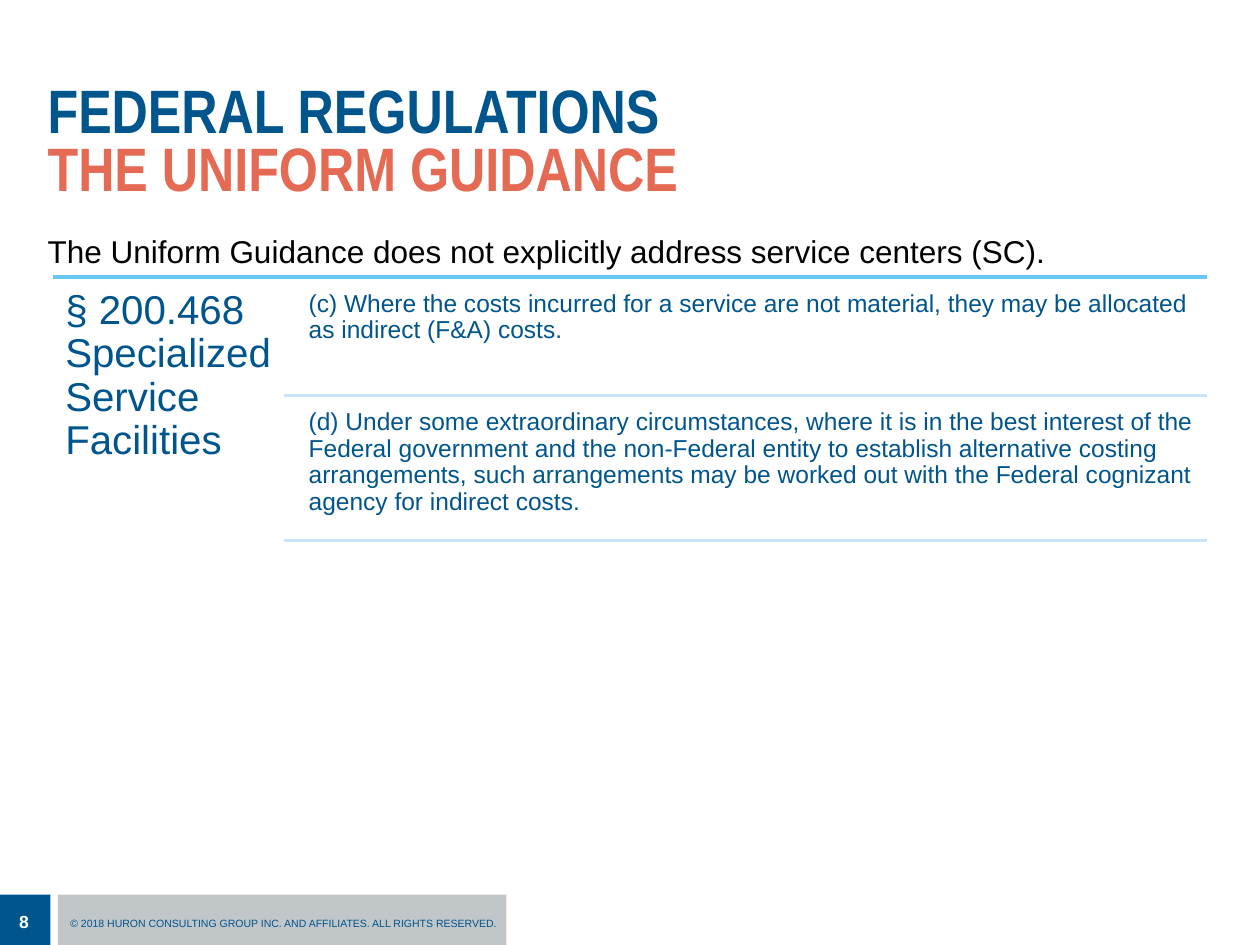
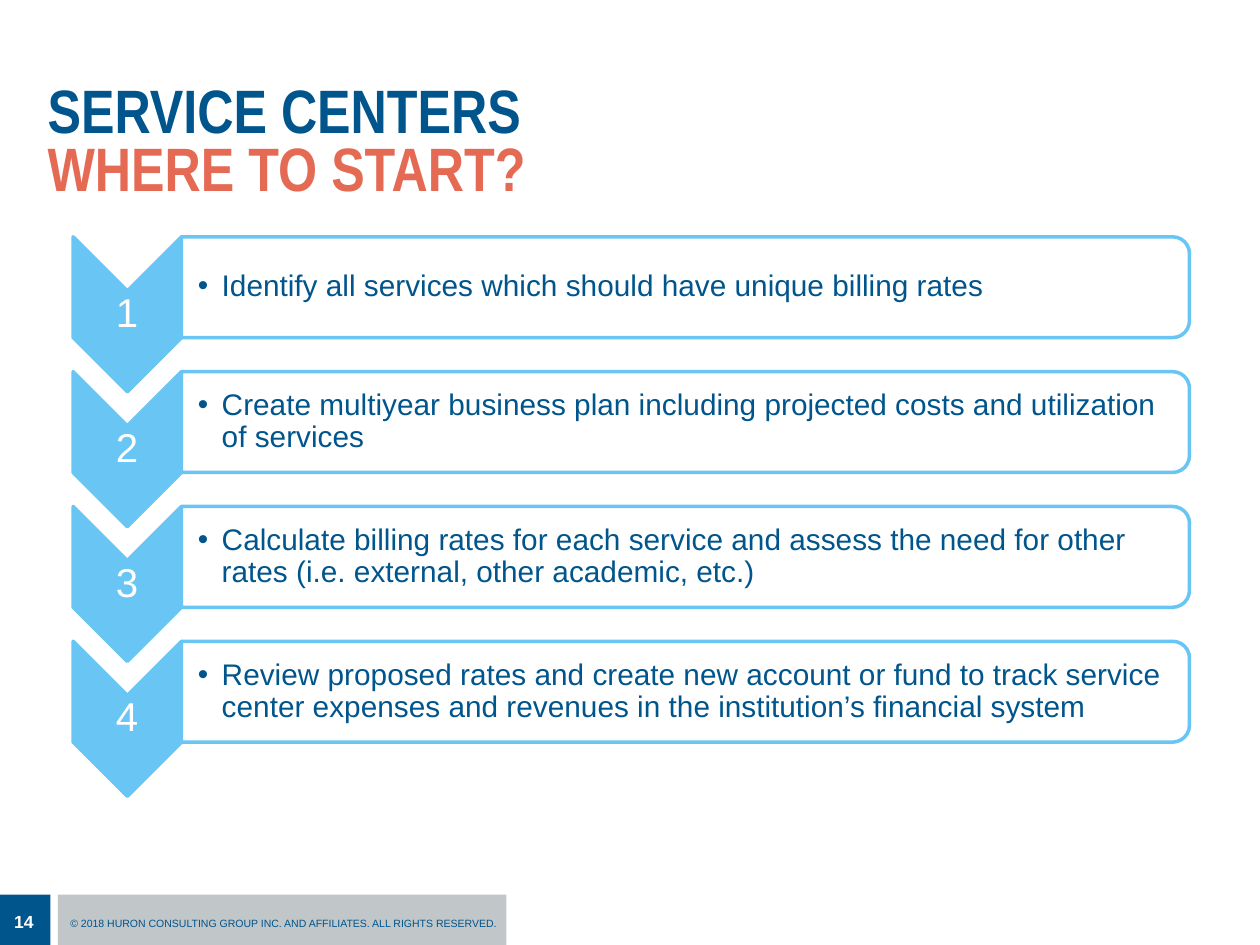
from lxml.etree import SubElement
from pptx import Presentation
from pptx.dml.color import RGBColor
from pptx.enum.shapes import MSO_CONNECTOR, MSO_SHAPE
from pptx.enum.text import MSO_ANCHOR, PP_ALIGN
from pptx.oxml.ns import qn
from pptx.util import Inches, Pt

COPYRIGHT = "© 2018 HURON CONSULTING GROUP INC. AND AFFILIATES. ALL RIGHTS RESERVED."
GUIDANCE = {
    "page": 8,
    "title": ("FEDERAL REGULATIONS", "THE UNIFORM GUIDANCE"),
    "lead": "The Uniform Guidance does not explicitly address service centers (SC).",
    "section": "§ 200.468 Specialized Service Facilities",
    "clauses": [
        ("(c) Where the costs incurred for a service are not material, they may be "
         "allocated as indirect (F&A) costs.", 0.89),
        ("(d) Under some extraordinary circumstances, where it is in the best interest of "
         "the Federal government and the non-Federal entity to establish alternative "
         "costing arrangements, such arrangements may be worked out with the Federal "
         "cognizant agency for indirect costs.", 1.1),
    ],
}
START = {
    "page": 14,
    "title": ("SERVICE CENTERS", "WHERE TO START?"),
    "steps": [
        "Identify all services which should have unique billing rates",
        "Create multiyear business plan including projected costs and utilization of services",
        "Calculate billing rates for each service and assess the need for other rates "
        "(i.e. external, other academic, etc.)",
        "Review proposed rates and create new account or fund to track service center "
        "expenses and revenues in the institution’s financial system",
    ],
}

WIDTH, HEIGHT = 10, 7.5
NAVY, CORAL, SKY, PALE = "00558C", "E56A54", "69C5F4", "C7E4FA"
GREY, WHITE, BLACK = "C1C6C8", "FFFFFF", "000000"
FOOTER = 0.4
RULE_LEFT, CLAUSE_RULE_LEFT, RULE_RIGHT = 0.42, 2.25, 9.58
CLAUSE_LEFT, CLAUSE_GAP, GUIDANCE_TOP = 2.39, 0.05, 2.2
STEP_TOP, STEP_PITCH = 1.88, 1.07
CHEVRON_LEFT, CHEVRON_WIDTH, CHEVRON_HEIGHT = 0.58, 0.86, 1.23
PANEL_WIDTH, PANEL_HEIGHT = 8, 0.8


def color(code):
    return RGBColor.from_string(code)


def add_text(slide, box, text, size, ink=NAVY, font="Arial", bold=False, insets=(0.1, 0.05, 0.1, 0.05),
             anchor=MSO_ANCHOR.TOP, align=PP_ALIGN.LEFT, spacing=1.0, bullet_indent=0):
    frame = slide.shapes.add_textbox(*map(Inches, box)).text_frame
    frame.word_wrap = True
    frame.vertical_anchor = anchor
    frame.margin_left, frame.margin_top, frame.margin_right, frame.margin_bottom = map(Inches, insets)
    frame.text = text
    paragraph = frame.paragraphs[0]
    paragraph.alignment, paragraph.line_spacing = align, spacing
    if bullet_indent:
        properties = paragraph._p.get_or_add_pPr()
        properties.set("marL", str(Inches(bullet_indent)))
        properties.set("indent", str(-Inches(bullet_indent)))
        SubElement(properties, qn("a:buFont")).set("typeface", font)
        SubElement(properties, qn("a:buChar")).set("char", "•")
    paragraph.font.size = Pt(size)
    for run in paragraph.runs:
        run.font.name, run.font.size, run.font.bold = font, Pt(size), bold
        run.font.color.rgb = color(ink)
    return paragraph


def add_block(slide, box, fill, outline=None, kind=MSO_SHAPE.RECTANGLE):
    block = slide.shapes.add_shape(kind, *map(Inches, box))
    block.shadow.inherit = False
    block.fill.solid()
    block.fill.fore_color.rgb = color(fill)
    if outline:
        block.line.color.rgb = color(outline)
        block.line.width = Pt(2)
    else:
        block.line.fill.background()
    return block


def add_turned_block(slide, box, fill, kind):
    left, top, width, height = box
    shift = (width - height) / 2
    block = add_block(slide, (left + shift, top - shift, height, width), fill, SKY, kind)
    block.rotation = 90


def add_rule(slide, left, y, ink):
    rule = slide.shapes.add_connector(
        MSO_CONNECTOR.STRAIGHT, Inches(left), Inches(y), Inches(RULE_RIGHT), Inches(y))
    rule.line.color.rgb = color(ink)
    rule.line.width = Pt(2)
    SubElement(rule._element.spPr, qn("a:effectLst"))


def add_base(deck, content):
    slide = deck.slides.add_slide(deck.slide_layouts[6])
    footer_top = HEIGHT - FOOTER
    add_block(slide, (0.46, footer_top, 3.56, FOOTER), GREY)
    add_text(slide, (0.46, footer_top + 0.13, 3.67, 0.2), COPYRIGHT, 6)
    add_block(slide, (0, footer_top, FOOTER, FOOTER), NAVY)
    add_text(slide, (0.01, footer_top + 0.08, FOOTER, 0.27), str(content["page"]), 10, WHITE, bold=True,
             insets=(0, 0.05, 0.04, 0.05), anchor=MSO_ANCHOR.MIDDLE, align=PP_ALIGN.CENTER)
    title = add_text(slide, (0.28, 0.51, 9.46, 1.28), "\v".join(content["title"]), 35,
                     font="Arial Narrow", bold=True, insets=(0.1,) * 4,
                     anchor=MSO_ANCHOR.MIDDLE, spacing=0.8)
    title.runs[1].font.color.rgb = color(CORAL)
    return slide


def build_guidance(deck):
    slide = add_base(deck, GUIDANCE)
    add_text(slide, (0.28, 1.79, 9.45, 0.53), GUIDANCE["lead"], 18, BLACK)
    add_rule(slide, RULE_LEFT, GUIDANCE_TOP, SKY)
    add_text(slide, (RULE_LEFT, GUIDANCE_TOP, CLAUSE_RULE_LEFT - RULE_LEFT, 2.16),
             GUIDANCE["section"], 23, insets=(0.1, 0.1, 0, 0.1), spacing=0.9)
    top = GUIDANCE_TOP
    for clause, height in GUIDANCE["clauses"]:
        top += CLAUSE_GAP
        add_text(slide, (CLAUSE_LEFT, top, 7.2, height), clause, 14, insets=(0.06,) * 4, spacing=0.9)
        top += height
        add_rule(slide, CLAUSE_RULE_LEFT, top, PALE)


def build_start(deck):
    slide = add_base(deck, START)
    panel_left = CHEVRON_LEFT + CHEVRON_WIDTH
    for index, step in enumerate(START["steps"]):
        top = STEP_TOP + index * STEP_PITCH
        add_turned_block(slide, (CHEVRON_LEFT, top, CHEVRON_WIDTH, CHEVRON_HEIGHT), SKY, MSO_SHAPE.CHEVRON)
        add_text(slide, (CHEVRON_LEFT, top + CHEVRON_WIDTH / 2, CHEVRON_WIDTH, CHEVRON_HEIGHT - CHEVRON_WIDTH),
                 str(index + 1), 23, WHITE, insets=(0.02,) * 4,
                 anchor=MSO_ANCHOR.MIDDLE, align=PP_ALIGN.CENTER, spacing=0.9)
        add_turned_block(slide, (panel_left, top, PANEL_WIDTH, PANEL_HEIGHT), WHITE,
                         MSO_SHAPE.ROUND_2_SAME_RECTANGLE)
        add_text(slide, (panel_left, top + 0.04, PANEL_WIDTH - 0.04, PANEL_HEIGHT - 0.08), step, 17,
                 insets=(0.13, 0.01, 0.01, 0.01), anchor=MSO_ANCHOR.MIDDLE,
                 spacing=0.9, bullet_indent=0.19)


def main():
    deck = Presentation()
    deck.slide_width, deck.slide_height = Inches(WIDTH), Inches(HEIGHT)
    build_guidance(deck)
    build_start(deck)
    deck.save("out.pptx")


if __name__ == "__main__":
    main()
